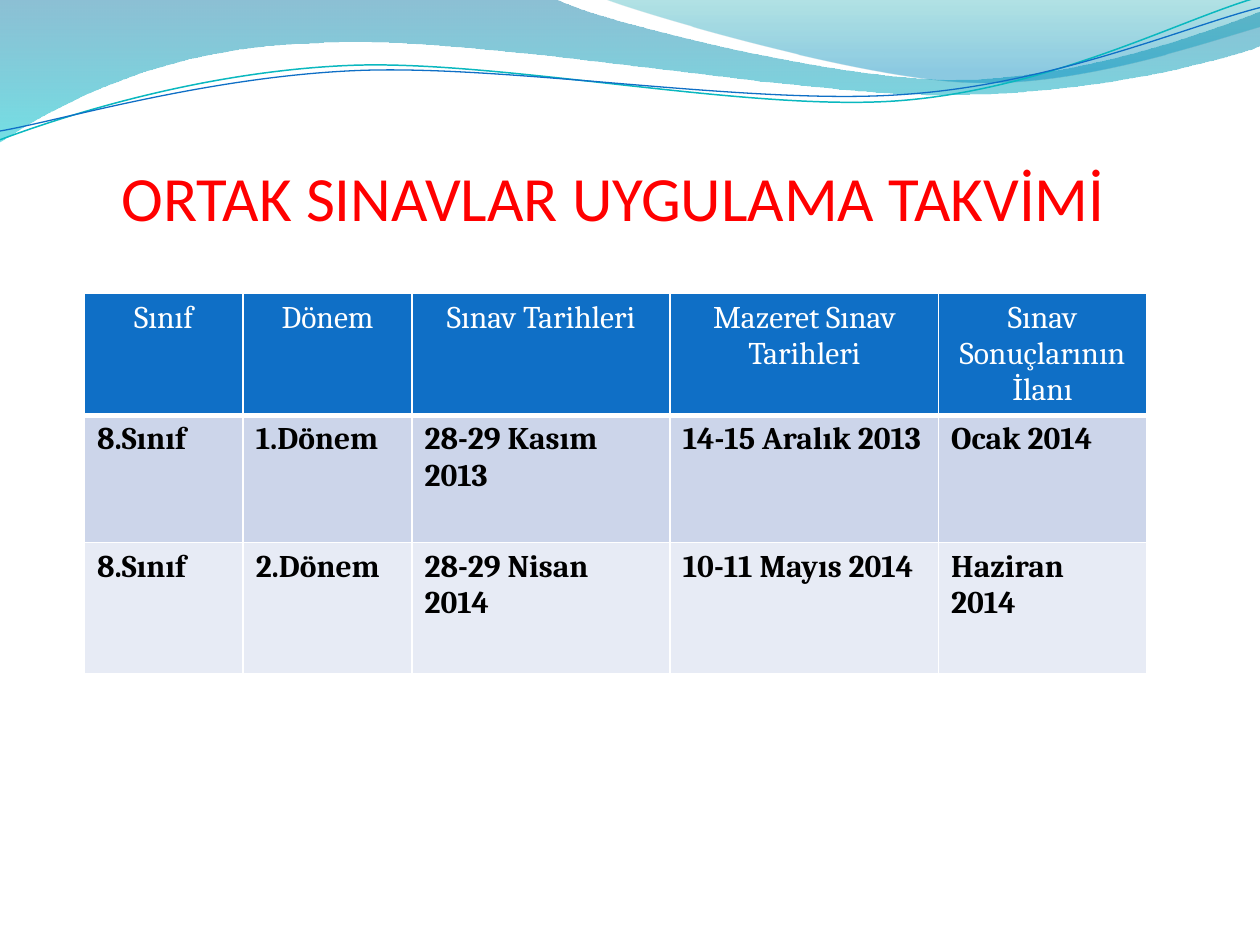
from math import cos, radians, sin
from pptx import Presentation
from pptx.dml.color import RGBColor
from pptx.enum.text import MSO_ANCHOR, MSO_AUTO_SIZE, PP_ALIGN
from pptx.oxml.ns import qn
from pptx.util import Inches, Pt
from lxml import etree

LEFT, MID = PP_ALIGN.LEFT, PP_ALIGN.CENTER
BOTTOM, FIXED = MSO_ANCHOR.BOTTOM, MSO_AUTO_SIZE.NONE

# Content
TITLE = "ORTAK SINAVLAR UYGULAMA TAKVİMİ"
ROWS = [
    ["Sınıf", "Dönem", "Sınav Tarihleri", "Mazeret Sınav Tarihleri",
     "Sınav Sonuçlarının İlanı"],
    ["8.Sınıf", "1.Dönem", "28-29 Kasım 2013", "14-15 Aralık 2013", "Ocak 2014"],
    ["8.Sınıf", "2.Dönem", "28-29 Nisan 2014", "10-11 Mayıs 2014", "Haziran 2014"],
]
WIDTHS = [1.26, 1.34, 2.05, 2.13, 1.65]
HEIGHTS = [0.79, 1.01, 1.04]
COLORS = {
    "title": "FF0000", "head": "0F6FC6", "odd": "CCD5EA", "even": "E7EBF5",
    "white": "FFFFFF", "black": "000000", "teal": "0AB8BF",
    "sea": "0074A1", "aqua": "00C6CF", "green": "00A1A9", "sky": "008BBF",
}
FILLS = ["head", "odd", "even"]

# Waves as box and outline: a pair is a straight step, six numbers a Bezier curve
BANDS = [
    ((-0.01, -0.01, 10.02, 1.14),
     [(0, 0), (4.4, -0.01), (4.76, 0.17, 6.64, 0.63, 7.58, 0.63),
      (8.53, 0.63, 9.58, 0.26, 10, 0.09), (10.01, 0.36),
      (9.83, 0.44, 8.7, 0.76, 7.46, 0.75), (6.22, 0.75, 3.82, 0.28, 2.57, 0.34),
      (1.29, 0.36, 0.46, 0.83, -0.01, 1.13), (0, 0)],
     [("sea", 0, 45), ("aqua", 1, 55)]),
    ((4.79, -0.01, 5.21, 0.7),
     [(4.79, -0.01), (5.09, 0.11, 6.82, 0.62, 7.69, 0.65),
      (8.56, 0.69, 9.61, 0.32, 10, 0.21), (10, 0), (4.79, -0.01)],
     [("green", 0, 30), ("sky", 0.8, 45)]),
]
STROKES = [
    ((-0.02, 0.22, 10.02, 0.71),
     [(0, 1.11), (0.48, 0.93, 1.58, 0.57, 2.77, 0.52),
      (3.95, 0.47, 5.93, 0.89, 7.13, 0.8), (8.33, 0.71, 9.38, 0.15, 9.98, -0.02)],
     "teal", 0.85),
    ((-0.02, 0.3, 10.03, 0.58),
     [(0, 1.04), (0.47, 0.96, 1.64, 0.61, 2.83, 0.56),
      (4.03, 0.51, 5.97, 0.84, 7.17, 0.75), (8.36, 0.67, 9.41, 0.21, 10, 0.06)],
     "head", 0.75),
]
TILT = -2.7


def rgb(name):
    return RGBColor.from_string(COLORS[name])


def write(frame, text, font="Cambria", size=18, color="black", bold=False, align=LEFT):
    para = frame.paragraphs[0]
    para.alignment = align
    run = para.add_run()
    run.text = text
    run.font.name, run.font.size, run.font.bold = font, Pt(size), bold
    run.font.color.rgb = rgb(color)


def local(x, y, box, tilt):
    """Place a slide point inside a box that is turned about its centre."""
    left, top, width, height = box
    dx, dy = x - left - width / 2, y - top - height / 2
    a = radians(-tilt)
    return (Inches(width / 2 + dx * cos(a) - dy * sin(a)),
            Inches(height / 2 + dx * sin(a) + dy * cos(a)))


def draw(shapes, box, steps, close=False, tilt=0):
    parts = [[local(s[i], s[i + 1], box, tilt) for i in range(0, len(s), 2)]
             for s in steps]
    pen = shapes.build_freeform(*parts[0][0])
    pen.add_line_segments([part[-1] for part in parts[1:]], close=close)
    wave = pen.convert_to_shape()
    wave.left, wave.top, wave.width, wave.height = map(Inches, box)
    wave.rotation = tilt % 360
    wave.shadow.inherit = False

    # Curved steps in the box's own units
    trail = next(wave._element.iter(qn("a:path")))
    trail.set("w", str(wave.width))
    trail.set("h", str(wave.height))
    for old in list(trail):
        trail.remove(old)
    for i, part in enumerate(parts):
        kind = "moveTo" if i == 0 else "lnTo" if len(part) == 1 else "cubicBezTo"
        step = etree.SubElement(trail, qn(f"a:{kind}"))
        for x, y in part:
            etree.SubElement(step, qn("a:pt"), x=str(x), y=str(y))
    if close:
        etree.SubElement(trail, qn("a:close"))
    return wave


def border(cell, widths):
    props = cell._tc.get_or_add_tcPr()
    for side, width in zip("LRTB", widths):
        line = etree.SubElement(props, qn(f"a:ln{side}"), w=str(Pt(width)))
        fill = etree.SubElement(line, qn("a:solidFill"))
        etree.SubElement(fill, qn("a:srgbClr"), val=COLORS["white"])


def main():
    prs = Presentation()
    prs.slide_width, prs.slide_height = Inches(10), Inches(7.5)
    slide = prs.slides.add_slide(prs.slide_layouts[5])
    shapes = slide.shapes

    # Waves along the top
    for box, steps, stops in BANDS:
        wave = draw(shapes, box, steps, close=True)
        wave.line.fill.background()
        wave.fill.gradient()
        wave.fill.gradient_angle = 270
        for stop, (name, place, _) in zip(wave.fill.gradient_stops, stops):
            stop.color.rgb, stop.position = rgb(name), place
        tints = list(wave._element.spPr.iter(qn("a:srgbClr")))
        for tint, (_, _, alpha) in zip(tints, stops):
            etree.SubElement(tint, qn("a:alpha"), val=str(alpha * 1000))
    for box, steps, name, width in STROKES:
        wave = draw(shapes, box, steps, tilt=TILT)
        wave.fill.background()
        wave.line.color.rgb, wave.line.width = rgb(name), Pt(width)

    # Title, in front of the waves
    title = shapes.title
    title.left, title.top = Inches(0.91), Inches(0.92)
    title.width, title.height = Inches(7.92), Inches(0.94)
    frame = title.text_frame
    frame.auto_size, frame.word_wrap = FIXED, True
    frame.vertical_anchor = BOTTOM
    frame.margin_left = frame.margin_right = frame.margin_bottom = 0
    frame.margin_top = Inches(0.05)
    write(frame, TITLE, font="Calibri", size=36, color="title", align=MID)
    shapes._spTree.append(title._element)

    # Exam calendar; the table style draws the body's white borders
    table = shapes.add_table(len(ROWS), len(WIDTHS), Inches(0.67), Inches(2.33),
                             Inches(sum(WIDTHS)), Inches(sum(HEIGHTS))).table
    for col, width in zip(table.columns, WIDTHS):
        col.width = Inches(width)
    for r, (row, height, fill) in enumerate(zip(ROWS, HEIGHTS, FILLS)):
        table.rows[r].height = Inches(height)
        head = r == 0
        for c, text in enumerate(row):
            cell = table.cell(r, c)
            if head:
                border(cell, (1, 1, 1, 3))
            cell.fill.solid()
            cell.fill.fore_color.rgb = rgb(fill)
            write(cell.text_frame, text, color="white" if head else "black",
                  bold=not head, align=MID if head else LEFT)

    prs.save("out.pptx")


if __name__ == "__main__":
    main()
